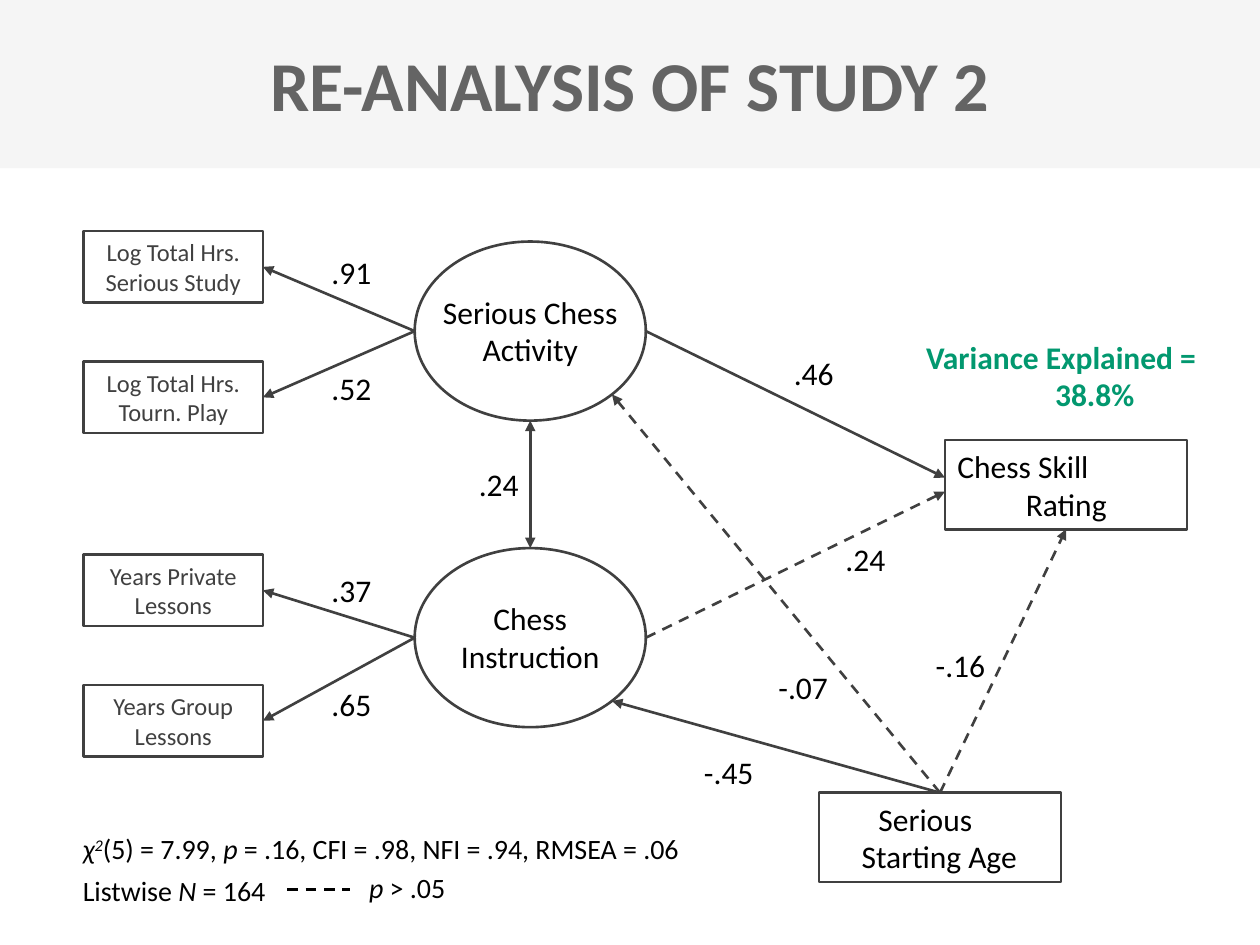
from math import sqrt

from lxml import etree
from pptx import Presentation
from pptx.dml.color import RGBColor
from pptx.enum.dml import MSO_LINE
from pptx.enum.shapes import MSO_CONNECTOR, MSO_SHAPE
from pptx.enum.text import MSO_ANCHOR, MSO_AUTO_SIZE, PP_ALIGN
from pptx.oxml.ns import qn
from pptx.util import Cm, Pt

RECT, OVAL = MSO_SHAPE.RECTANGLE, MSO_SHAPE.OVAL
STRAIGHT, DASH = MSO_CONNECTOR.STRAIGHT, MSO_LINE.DASH
LEFT, CENTER, RIGHT = PP_ALIGN.LEFT, PP_ALIGN.CENTER, PP_ALIGN.RIGHT
MIDDLE, TOP = MSO_ANCHOR.MIDDLE, MSO_ANCHOR.TOP
NO_FIT = MSO_AUTO_SIZE.NONE
TITLE_ONLY = 5
FONT = "Calibri"
GRAY, BLACK, GREEN = "404040", "000000", "02986F"

INDICATOR = (3.61, 1.44)    # width, height of the small boxes
VARIABLE = (4.88, 1.8)      # width, height of the large boxes
FACTOR = (4.66, 3.61)       # width, height of the ellipses


def color(value):
    return RGBColor.from_string(value)


def write(sp, lines, size=18, fill=BLACK, bold=False, align=CENTER,
          anchor=MIDDLE, indents=(), space=0):
    """Write paragraphs; each is a string or a list of (text, style) runs."""
    tf = sp.text_frame
    tf.word_wrap, tf.auto_size, tf.vertical_anchor = True, NO_FIT, anchor
    for i, line in enumerate(lines):
        p = tf.add_paragraph() if i else tf.paragraphs[0]
        p.alignment = align
        if i and space:
            p.space_before = Pt(space)
        if indents:
            p._p.get_or_add_pPr().set("marL", str(Cm(indents[i])))
        for text, style in [(line, "")] if isinstance(line, str) else line:
            r = p.add_run()
            r.text = text
            f = r.font
            f.name, f.size, f.bold = FONT, Pt(size), bold
            f.italic = "italic" in style
            f.color.rgb = color(fill)
            if "super" in style:
                r._r.get_or_add_rPr().set("baseline", "30000")


def add_text(s, x, y, w, h, lines, **fmt):
    sp = s.shapes.add_textbox(Cm(x), Cm(y), Cm(w), Cm(h))
    write(sp, lines, **{"anchor": TOP, **fmt})


def add_node(s, kind, x, y, extent, lines=(), **fmt):
    sp = s.shapes.add_shape(kind, Cm(x), Cm(y), *map(Cm, extent))
    sp.shadow.inherit = False
    sp.fill.background()
    sp.line.color.rgb, sp.line.width = color(GRAY), Pt(1.5)
    write(sp, lines, **fmt)
    return sp


def add_line(s, start, end, dash=False, heads=("tailEnd",), stroke=GRAY):
    """Each end is an (x, y) point in cm or a (shape, site) pair."""
    points = [(0, 0) if hasattr(e[0], "shape_id") else e for e in (start, end)]
    c = s.shapes.add_connector(STRAIGHT, *(Cm(v) for pt in points for v in pt))
    for e, join in ((start, c.begin_connect), (end, c.end_connect)):
        if hasattr(e[0], "shape_id"):
            join(*e)
    c.line.color.rgb, c.line.width = color(stroke), Pt(1.5)
    if dash:
        c.line.dash_style = DASH
    ln = c.line._get_or_add_ln()
    for head in heads:
        etree.SubElement(ln, qn("a:" + head), type="triangle")
    etree.SubElement(c._element.spPr, qn("a:effectLst"))


def oval_point(x, y, dx, dy):
    """Point on a factor ellipse in the direction (dx, dy) from its centre."""
    w, h = FACTOR
    k = 2 * sqrt(dx * dx + dy * dy)
    return x + w / 2 + w * dx / k, y + h / 2 + h * dy / k


def add_header(s):
    band = s.shapes.add_shape(RECT, 0, 0, Cm(25.4), Cm(3.39))
    band.shadow.inherit = False
    band.fill.solid()
    band.fill.fore_color.rgb = color("F5F5F5")
    band.line.fill.background()
    s.shapes._spTree.insert(2, band._element)
    title = s.shapes.title
    title.left, title.top, title.width, title.height = map(Cm, (0, 1.12, 25.4, 1.14))
    write(title, ["RE-ANALYSIS OF STUDY 2"], size=40, fill="646464", bold=True)


def add_factor(s, x, y, name, indicators, first_y):
    """Ellipse with its name and arrows to its indicator boxes."""
    w, h = FACTOR
    add_node(s, OVAL, x, y, FACTOR)
    add_text(s, x, y + (h - 1.8) / 2, w, 1.8, [name])
    for i, text in enumerate(indicators):
        box = add_node(s, RECT, 1.69, first_y + 2.63 * i, INDICATOR, [text],
                       size=14, fill=GRAY)
        add_line(s, oval_point(x, y, -1, 0), (box, 3))


def main():
    prs = Presentation()
    prs.slide_width, prs.slide_height = Cm(25.4), Cm(19.05)
    s = prs.slides.add_slide(prs.slide_layouts[TITLE_ONLY])
    add_header(s)

    # Observed variables
    rating = add_node(s, RECT, 19.05, 8.87, VARIABLE, ["Chess Skill", "Rating"],
                      align=LEFT, indents=(0, 1.38))
    age = add_node(s, RECT, 16.51, 15.98, VARIABLE, ["Serious", "Starting Age"],
                   align=LEFT, indents=(0.95, 0.61))

    # Latent factors and their indicators
    activity, instruction = (8.36, 4.87), (8.36, 11.05)
    add_factor(s, *activity, "Serious Chess Activity",
               ["Log Total Hrs. Serious Study", "Log Total Hrs. Tourn. Play"], 4.66)
    add_factor(s, *instruction, "Chess Instruction",
               ["Years Private Lessons", "Years Group Lessons"], 11.18)

    # Structural paths
    add_line(s, oval_point(*activity, 1, 0), (19.05, 9.63))
    add_line(s, oval_point(*instruction, 1, 0), (19.05, 9.91), dash=True)
    add_line(s, (age, 0), (rating, 2), dash=True)
    add_line(s, (age, 0), oval_point(*activity, 1, 1), dash=True)
    add_line(s, (age, 0), oval_point(*instruction, 1, 1))
    add_line(s, oval_point(*instruction, 0, -1), oval_point(*activity, 0, 1),
             heads=("headEnd", "tailEnd"))

    # Path coefficients
    for text, x, y in ((".91", 6.35, 4.98), (".52", 6.35, 7.32),
                       (".37", 6.35, 11.38), (".65", 6.35, 13.69),
                       (".46", 15.67, 7.01), (".24", 16.71, 10.77),
                       (".24", 9.32, 9.25)):
        add_text(s, x, y, 1.47, 1.02, [text])
    for text, x, y in (("-.45", 13.54, 15.06), ("-.07", 15.04, 13.34),
                       ("-.16", 18.21, 12.9)):
        add_text(s, x, y, 1.9, 1.02, [text], align=RIGHT)
    add_text(s, 18.42, 6.68, 6.15, 1.8, ["Variance Explained =", "38.8%"],
             fill=GREEN, bold=True, align=LEFT, indents=(0, 2.6))

    # Fit statistics and line legend
    fit = [("χ", "italic"), ("2", "italic super"), ("(5) = 7.99, ", ""),
           ("p", "italic"), (" = .16, CFI = .98, NFI = .94, RMSEA = .06", "")]
    sample = [("Listwise ", ""), ("N", "italic"), (" = 164", "")]
    add_text(s, 1.42, 16.64, 13.67, 1.8, [fit, sample], size=16, align=LEFT, space=5)
    add_line(s, (5.79, 17.93), (7.06, 17.93), dash=True, heads=(), stroke=BLACK)
    add_text(s, 7.19, 17.42, 3.96, 0.94, [[("p", "italic"), (" > .05", "")]],
             size=16, align=LEFT)

    prs.save("out.pptx")


if __name__ == "__main__":
    main()
